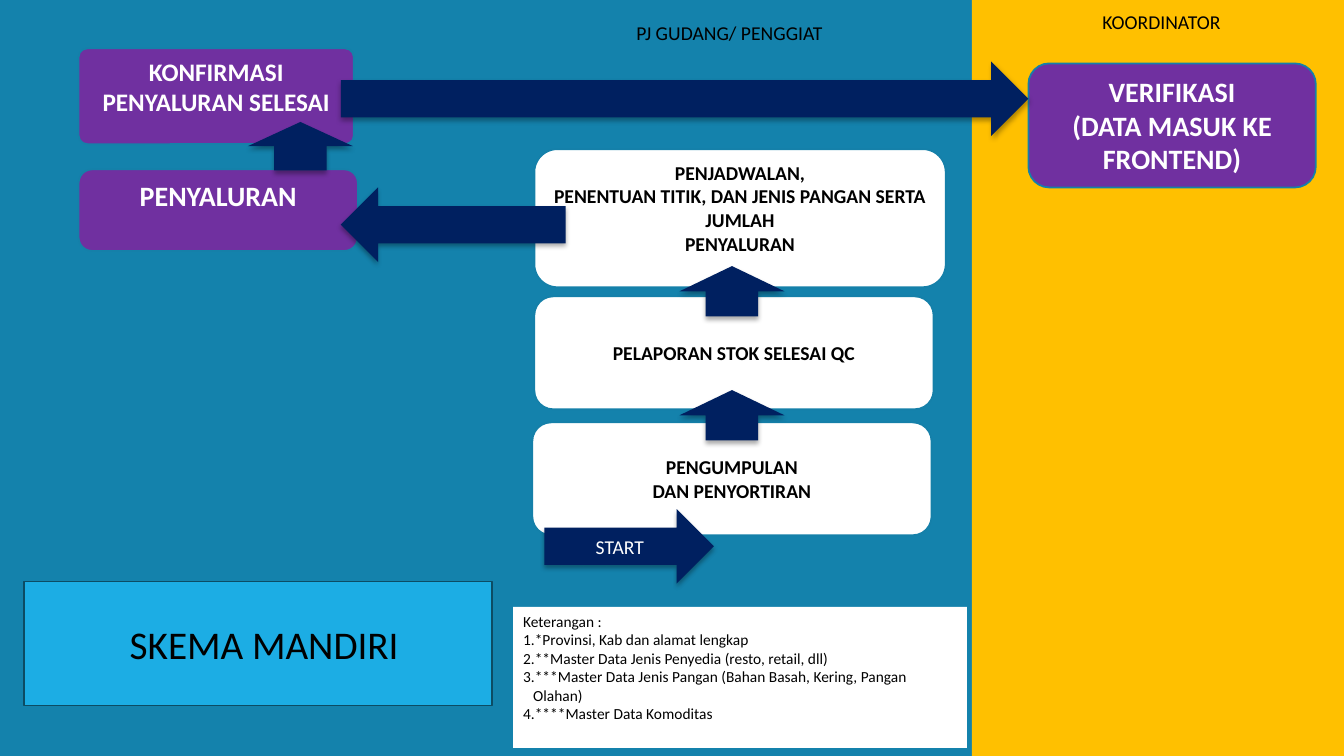
from lxml import etree
from pptx import Presentation
from pptx.dml.color import RGBColor
from pptx.enum.shapes import MSO_SHAPE
from pptx.enum.text import MSO_ANCHOR, MSO_AUTO_SIZE, PP_ALIGN
from pptx.oxml.ns import qn
from pptx.util import Emu, Pt

RECT, ROUNDED = MSO_SHAPE.RECTANGLE, MSO_SHAPE.ROUNDED_RECTANGLE
RIGHT, LEFT, UP = MSO_SHAPE.RIGHT_ARROW, MSO_SHAPE.LEFT_ARROW, MSO_SHAPE.UP_ARROW
TOP, MIDDLE = MSO_ANCHOR.TOP, MSO_ANCHOR.MIDDLE
CENTER, START_SIDE = PP_ALIGN.CENTER, PP_ALIGN.LEFT
GROW = MSO_AUTO_SIZE.SHAPE_TO_FIT_TEXT

FONT = "Calibri"
BLACK, WHITE = "000000", "FFFFFF"
TEAL, GOLD, PURPLE, NAVY = "1482AC", "FFC000", "7030A0", "002060"
OUTLINE, SKY, DARK_TEAL = "1580A9", "1CADE4", "0C4C64"


def px(length):
    """One px is a hundredth of an inch."""
    return Emu(length * 9144)


def rgb(colour):
    return RGBColor.from_string(colour)


def add_text(frame, lines, size, colour=BLACK, bold=False, align=CENTER):
    for index, line in enumerate(lines):
        paragraph = frame.paragraphs[0] if index == 0 else frame.add_paragraph()
        paragraph.alignment = align
        run = paragraph.add_run()
        run.text = line
        run.font.name = FONT
        run.font.size = Pt(size)
        run.font.bold = bold
        run.font.color.rgb = rgb(colour)


def add_panel(slide, preset, box, fill, line=None):
    panel = slide.shapes.add_shape(preset, *map(px, box))
    panel.shadow.inherit = False
    panel.fill.solid()
    panel.fill.fore_color.rgb = rgb(fill)
    if line:
        panel.line.color.rgb = rgb(line)
        panel.line.width = Pt(1.25)
    else:
        panel.line.fill.background()
    return panel


def add_label(slide, box, text, size, wrap):
    label = slide.shapes.add_textbox(*map(px, box))
    label.text_frame.word_wrap = wrap
    label.text_frame.auto_size = GROW
    add_text(label.text_frame, [text], size)


def add_lane(slide, box, fill, heading, heading_box):
    """Heading box is relative to the lane."""
    left, top, _, _ = box
    x, y, width, height = heading_box
    add_panel(slide, RECT, box, fill)
    add_label(slide, (left + x, top + y, width, height), heading, 14, wrap=False)


def add_step(slide, box, lines, fill, size, anchor=TOP, corner=None):
    step = add_panel(slide, ROUNDED, box, fill, OUTLINE)
    if corner:
        step.adjustments[0] = corner
    step.text_frame.word_wrap = True
    step.text_frame.vertical_anchor = anchor
    add_text(step.text_frame, lines, size, BLACK if fill == WHITE else WHITE, bold=True)


def add_arrow(slide, preset, box, text=None):
    arrow = add_panel(slide, preset, box, NAVY)
    effects = arrow._element.spPr.find(qn("a:effectLst"))
    shadow = etree.SubElement(effects, qn("a:outerShdw"), blurRad=str(Pt(3.5)),
                              dist=str(Pt(2.2)), dir="5400000", rotWithShape="0")
    tint = etree.SubElement(shadow, qn("a:srgbClr"), val=BLACK)
    etree.SubElement(tint, qn("a:alpha"), val="32000")
    if text:
        arrow.text_frame.vertical_anchor = MIDDLE
        add_text(arrow.text_frame, [text], 14, WHITE)


def add_legend(slide, box, heading, notes):
    legend = add_panel(slide, RECT, box, WHITE)
    frame = legend.text_frame
    frame.word_wrap = True
    frame.vertical_anchor = TOP
    add_text(frame, [heading, *notes], 11, align=START_SIDE)
    for note in frame.paragraphs[1:]:
        properties = note._p.get_or_add_pPr()
        properties.set("marL", str(px(10)))
        properties.set("indent", str(-px(10)))
        etree.SubElement(properties, qn("a:buFont"), typeface="+mj-lt")
        etree.SubElement(properties, qn("a:buAutoNum"), type="arabicPeriod")


def add_title(slide, box, text):
    left, top, width, _ = box
    add_panel(slide, RECT, box, SKY, DARK_TEAL)
    add_label(slide, (left + 16, top + 33, width - 20, 57), text, 28, wrap=True)


def main():
    deck = Presentation()
    deck.slide_width, deck.slide_height = px(1333), px(750)
    slide = deck.slides.add_slide(deck.slide_layouts[6])

    add_lane(slide, (0, 0, 973, 750), TEAL, "PJ GUDANG/ PENGGIAT", (564, 16, 319, 34))
    add_lane(slide, (964, 0, 370, 750), GOLD, "KOORDINATOR", (116, 5, 144, 34))

    add_step(slide, (528, 419, 396, 112), ["PENGUMPULAN", "DAN PENYORTIRAN"],
             WHITE, 14, MIDDLE)
    add_step(slide, (530, 294, 396, 112), ["PELAPORAN STOK SELESAI QC"], WHITE, 14, MIDDLE)
    add_step(slide, (530, 148, 408, 137),
             ["PENJADWALAN,", "PENENTUAN TITIK, DAN JENIS PANGAN SERTA JUMLAH",
              "PENYALURAN"], WHITE, 14)
    add_step(slide, (78, 168, 277, 81), ["PENYALURAN"], PURPLE, 20)
    add_step(slide, (78, 48, 273, 95), ["KONFIRMASI PENYALURAN SELESAI"],
             PURPLE, 18, corner=0.09)
    add_step(slide, (1020, 63, 285, 123), ["VERIFIKASI", "(DATA MASUK KE FRONTEND)"],
             PURPLE, 20)

    add_arrow(slide, RIGHT, (540, 505, 168, 74), "START")
    add_arrow(slide, UP, (674, 387, 104, 50))
    add_arrow(slide, UP, (674, 264, 104, 50))
    add_arrow(slide, LEFT, (338, 186, 223, 74))
    add_arrow(slide, UP, (246, 121, 104, 48))
    add_arrow(slide, RIGHT, (338, 61, 682, 74))

    add_legend(slide, (509, 602, 450, 140), "Keterangan :", [
        "*Provinsi, Kab dan alamat lengkap",
        "**Master Data Jenis Penyedia (resto, retail, dll)",
        "***Master Data Jenis Pangan (Bahan Basah, Kering, Pangan Olahan)",
        "****Master Data Komoditas",
    ])
    add_title(slide, (24, 577, 464, 123), "SKEMA MANDIRI")

    deck.save("out.pptx")


if __name__ == "__main__":
    main()
